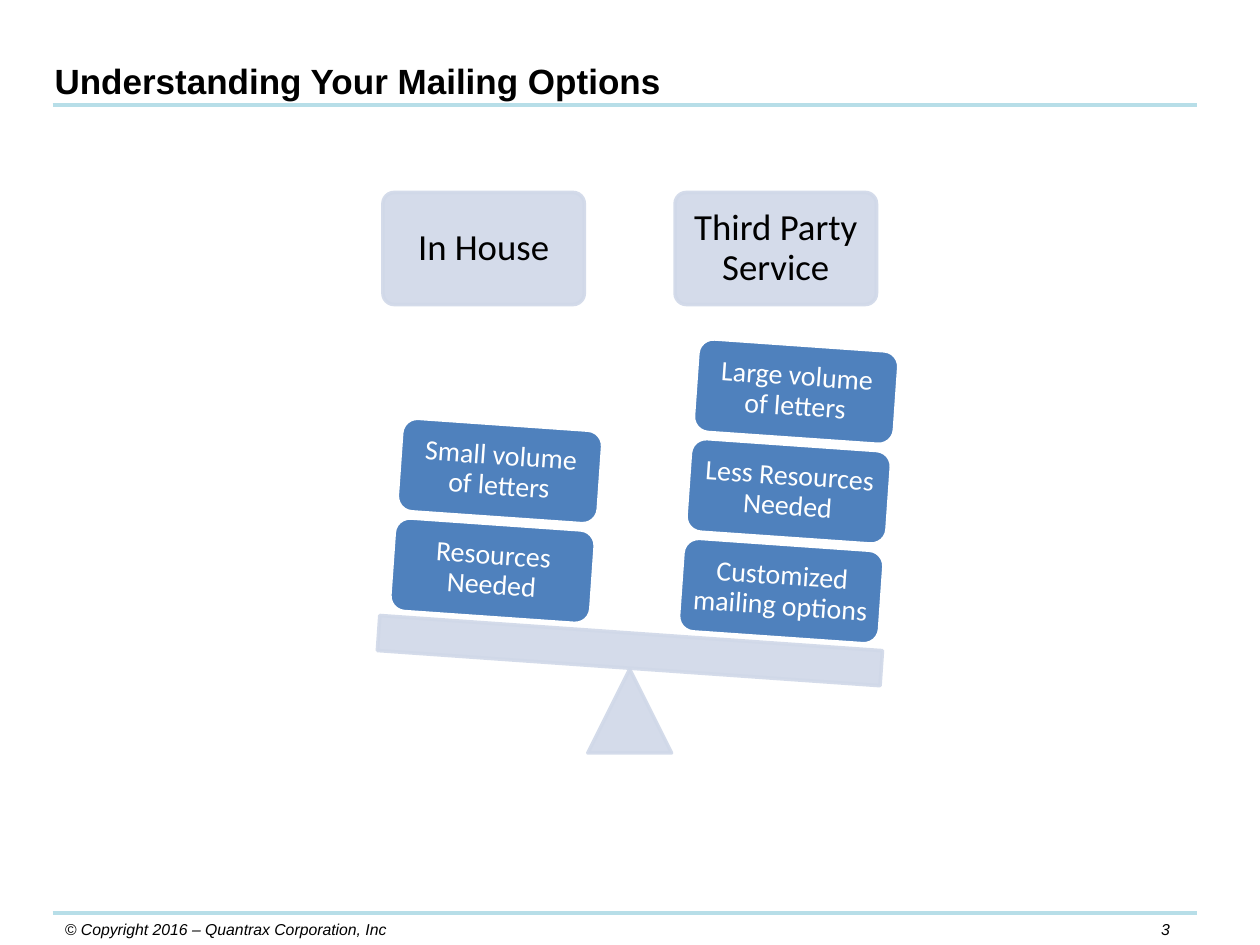
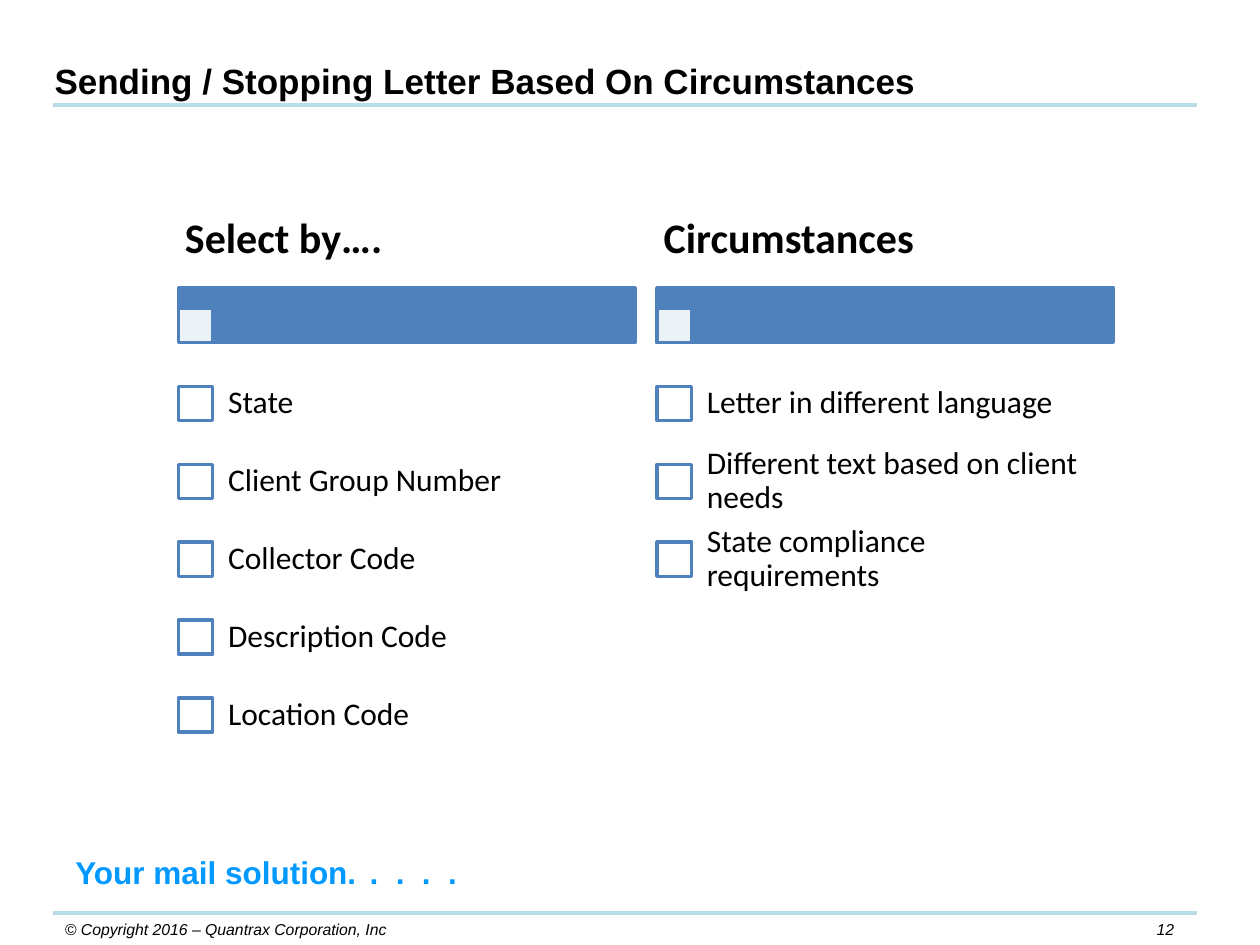
from lxml import etree
from pptx import Presentation
from pptx.dml.color import RGBColor
from pptx.enum.shapes import MSO_CONNECTOR, MSO_SHAPE
from pptx.enum.text import MSO_ANCHOR, PP_ALIGN
from pptx.oxml.ns import qn
from pptx.util import Cm, Pt

# Shared colours and fonts
BLACK, WHITE = "000000", "FFFFFF"
RULE, PALE, BLUE, BRIGHT = "B7DEE8", "D0D8E8", "4F81BD", "0099FF"
HEADING_FONT, BODY_FONT = "Arial", "Calibri"
RULE_LEFT, RULE_RIGHT = 1.06, 24.13
FOOTER_TOP = 18.41

# Seesaw: the stacks lean with the beam
TILT = 4
BLOCK_WIDTH, BLOCK_HEIGHT = 4.06, 1.89
LEAN, RISE = 0.15, 2.01

# Checklist grid
COLUMN_WIDTH = 9.2
ROW_TOP, ROW_HEIGHT = 7.35, 1.57
TICK_SIZE = 0.69


def color(hex_code):
    return RGBColor.from_string(hex_code)


def write(frame, text, size, font=BODY_FONT, ink=BLACK, bold=False, italic=False,
          align=PP_ALIGN.LEFT, anchor=MSO_ANCHOR.TOP, insets=(0.25, 0.13), spacing=None):
    """Fill a text frame with one paragraph; insets are horizontal, vertical."""
    frame.text = text
    frame.word_wrap = True
    frame.vertical_anchor = anchor
    frame.margin_left = frame.margin_right = Cm(insets[0])
    frame.margin_top = frame.margin_bottom = Cm(insets[1])
    paragraph = frame.paragraphs[0]
    paragraph.alignment = align
    paragraph.line_spacing = spacing
    for run in paragraph.runs:
        run.font.name = font
        run.font.size = Pt(size)
        run.font.bold = bold
        run.font.italic = italic
        run.font.color.rgb = color(ink)
    return paragraph


def add_label(slide, text, left, top, width, height, size, **style):
    label = slide.shapes.add_textbox(Cm(left), Cm(top), Cm(width), Cm(height))
    return write(label.text_frame, text, size, **style)


def add_solid(slide, kind, left, top, width, height, fill, outline, tilt=0):
    solid = slide.shapes.add_shape(kind, Cm(left), Cm(top), Cm(width), Cm(height))
    solid.shadow.inherit = False
    solid.fill.solid()
    solid.fill.fore_color.rgb = color(fill)
    solid.line.color.rgb = color(outline)
    solid.line.width = Pt(2)
    solid.rotation = tilt
    return solid


def make_translucent(solid, fill_only=False):
    """Set 90 % opacity on the fill and, unless fill_only, the outline."""
    tints = list(solid._element.spPr.iter(qn("a:srgbClr")))
    for tint in tints[:1] if fill_only else tints:
        etree.SubElement(tint, qn("a:alpha")).set("val", "90000")


def add_rule(slide, top):
    rule = slide.shapes.add_connector(MSO_CONNECTOR.STRAIGHT, Cm(RULE_LEFT), Cm(top),
                                      Cm(RULE_RIGHT), Cm(top))
    rule.line.color.rgb = color(RULE)
    rule.line.width = Pt(2.25)
    etree.SubElement(rule._element.spPr, qn("a:effectLst"))


def add_framed_slide(deck, title, number):
    """Slide with title, both rules and the footer."""
    slide = deck.slides.add_slide(deck.slide_layouts[6])
    add_rule(slide, 2.11)
    footer = dict(size=9, font=HEADING_FONT, italic=True)
    add_label(slide, number, 22.86, FOOTER_TOP, 1.27, 0.64, align=PP_ALIGN.CENTER, **footer)
    add_label(slide, "© Copyright 2016 – Quantrax Corporation, Inc",
              RULE_LEFT, FOOTER_TOP, 8.26, 0.64, **footer)
    add_rule(slide, FOOTER_TOP)
    add_label(slide, title, 0.85, 1.06, 18.63, 1.11, 20, font=HEADING_FONT, bold=True)
    return slide


def add_option_heading(slide, text, left):
    heading = add_solid(slide, MSO_SHAPE.ROUNDED_RECTANGLE, left, 3.88, 4.06, 2.26, PALE, PALE)
    heading.adjustments[0] = 0.1
    make_translucent(heading)
    write(heading.text_frame, text, 21, align=PP_ALIGN.CENTER, anchor=MSO_ANCHOR.MIDDLE,
          insets=(0.23, 0.23), spacing=0.9)


def add_stack(slide, blocks, left, top):
    """Stack tilted blocks from the bottom one up."""
    for level, text in enumerate(blocks):
        block = add_solid(slide, MSO_SHAPE.ROUNDED_RECTANGLE, left + level * LEAN,
                          top - level * RISE, BLOCK_WIDTH, BLOCK_HEIGHT, BLUE, WHITE, TILT)
        write(block.text_frame, text, 16, ink=WHITE, align=PP_ALIGN.CENTER,
              anchor=MSO_ANCHOR.MIDDLE, insets=(0.18, 0.18), spacing=0.9)


def add_seesaw(slide):
    pivot = add_solid(slide, MSO_SHAPE.ISOSCELES_TRIANGLE, 11.85, 13.49, 1.69, 1.69, PALE, PALE)
    beam = add_solid(slide, MSO_SHAPE.RECTANGLE, 7.62, 12.76, 10.16, 0.71, PALE, PALE, TILT)
    for part in (pivot, beam):
        make_translucent(part)


def add_checklist(slide, heading, items, left):
    # Heading over a bar with a pale square in its corner
    add_solid(slide, MSO_SHAPE.RECTANGLE, left, 5.81, COLUMN_WIDTH, 1.1, BLUE, BLUE)
    corner = add_solid(slide, MSO_SHAPE.RECTANGLE, left, 6.22, TICK_SIZE, TICK_SIZE, WHITE, BLUE)
    make_translucent(corner, fill_only=True)
    add_label(slide, heading, left, 3.88, COLUMN_WIDTH, 1.93, 24, bold=True,
              anchor=MSO_ANCHOR.MIDDLE, insets=(0.13, 0.08), spacing=0.9)
    # One tick box and label per row
    for row, item in enumerate(items):
        top = ROW_TOP + row * ROW_HEIGHT
        add_solid(slide, MSO_SHAPE.RECTANGLE, left, top + (ROW_HEIGHT - TICK_SIZE) / 2,
                  TICK_SIZE, TICK_SIZE, WHITE, BLUE)
        add_label(slide, item, left + 0.64, top, 8.55, ROW_HEIGHT, 18,
                  anchor=MSO_ANCHOR.MIDDLE, insets=(0.36, 0.36), spacing=0.9)


def add_teaser(slide):
    """Closing line whose trailing dots are spread by letter spacing."""
    style = dict(font=HEADING_FONT, ink=BRIGHT, bold=True)
    teaser = add_label(slide, "Your mail solution.", 1.27, 17.15, 13.13, 1.06, 18,
                       spacing=0.9, **style)
    dots = teaser.add_run()
    dots.text = " . . . ."
    dots.font.name = HEADING_FONT
    dots.font.size = Pt(18)
    dots.font.bold = True
    dots.font.color.rgb = color(BRIGHT)
    dots._r.get_or_add_rPr().set("spc", "250")


def main():
    deck = Presentation()
    deck.slide_width, deck.slide_height = Cm(25.4), Cm(19.05)

    # Mailing options on a seesaw
    options = add_framed_slide(deck, "Understanding Your Mailing Options", "3")
    add_option_heading(options, "In House", 7.72)
    add_option_heading(options, "Third Party Service", 13.61)
    add_seesaw(options)
    add_stack(options, ["Customized mailing options", "Less Resources Needed",
                        "Large volume of letters"], 13.72, 10.97)
    add_stack(options, ["Resources Needed", "Small volume of letters"], 7.9, 10.56)

    # Letter selection checklists
    letters = add_framed_slide(deck, "Sending / Stopping Letter Based On Circumstances", "12")
    add_teaser(letters)
    add_checklist(letters, "Select by….", ["State", "Client Group Number", "Collector Code",
                                           "Description Code", "Location Code"], 3.6)
    add_checklist(letters, "Circumstances", ["Letter in different language",
                                             "Different text based on client needs",
                                             "State compliance requirements"], 13.25)

    deck.save("out.pptx")


if __name__ == "__main__":
    main()
